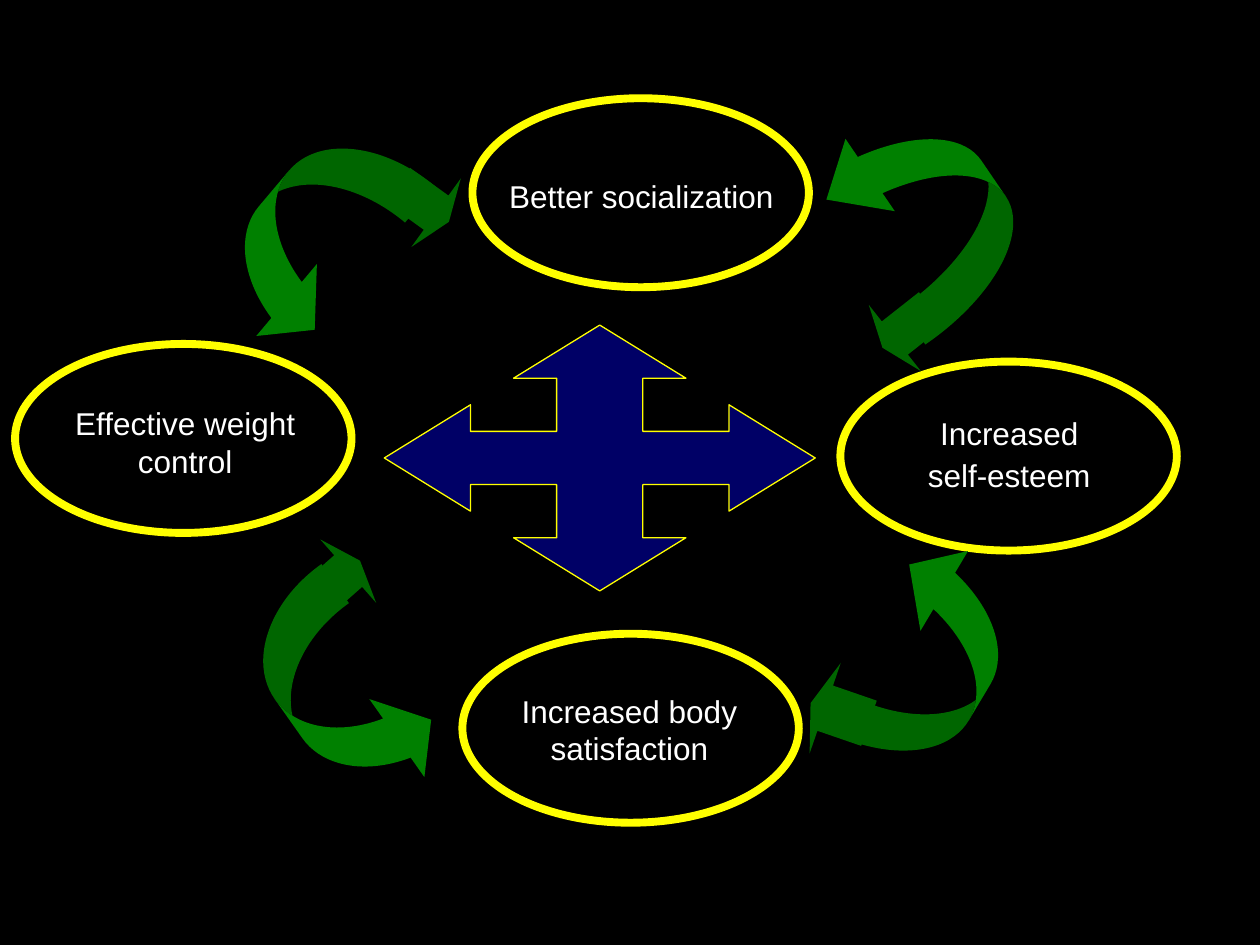
import pptx
import pptx.util
import pptx.dml.color
import pptx.enum.shapes
import pptx.enum.text

PX = 9144
SHAPES = pptx.enum.shapes.MSO_SHAPE
RGBColor = pptx.dml.color.RGBColor
BLACK = RGBColor(0x00, 0x00, 0x00)
WHITE = RGBColor(0xFF, 0xFF, 0xFF)
YELLOW = RGBColor(0xFF, 0xFF, 0x00)
NAVY = RGBColor(0x00, 0x00, 0x66)
GREEN = RGBColor(0x00, 0x80, 0x00)
DARK_GREEN = RGBColor(0x00, 0x66, 0x00)

OVAL_SIZE = (267, 150)
LABELLED_OVALS = [
    ((367, 503), (374, 544, 251, 91), ["Increased body satisfaction"]),
    ((667, 287), (676, 324, 250, 91), ["Increased", "self-esteem"]),
    ((12, 273), (20, 316, 254, 91), ["Effective weight control"]),
]
CURVED_ARROWS = [
    ((200, 95, 97, 186), 40.1, (0.385, 0.77, 0.333)),
    ((686, 430, 104, 184), 210.8, (0.322, 0.709, 0.333)),
    ((226, 457, 92, 189), 324.8, (0.412, 0.824, 0.333)),
    ((675, 81, 119, 174), 145.7, (0.292, 0.584, 0.333)),
]
ARROW_TIPS = [
    ((311, 128, 50, 67), 35.8),
    ((695, 227, 50, 67), 141.8),
    ((642, 528, 49, 76), 199),
    ((242, 428, 50, 67), 318.6),
]


def scaled(box):
    return [length * PX for length in box]


def add_oval(page, left, top):
    oval = page.shapes.add_shape(SHAPES.OVAL, *scaled((left, top, *OVAL_SIZE)))
    oval.shadow.inherit = False
    oval.fill.background()
    oval.line.color.rgb = YELLOW
    oval.line.width = pptx.util.Pt(4.5)


def write_label(shape, lines):
    frame = shape.text_frame
    frame.text = "\n".join(lines)
    for index, para in enumerate(frame.paragraphs):
        para.alignment = pptx.enum.text.PP_ALIGN.CENTER
        para.space_before = pptx.util.Pt(2 if index else 0)
        para.font.name = "Arial"
        para.font.size = pptx.util.Pt(18)
        para.font.color.rgb = WHITE


def add_label(page, box, lines):
    label = page.shapes.add_textbox(*scaled(box))
    label.text_frame.word_wrap = True
    write_label(label, lines)


def add_oval_label(page, box, lines):
    label = page.shapes.add_shape(SHAPES.OVAL, *scaled(box))
    label.shadow.inherit = False
    label.fill.background()
    label.line.fill.background()
    label.text_frame.word_wrap = False
    label.text_frame.vertical_anchor = pptx.enum.text.MSO_ANCHOR.MIDDLE
    write_label(label, lines)


def add_four_way_arrow(page, box):
    left, top, width, height = scaled(box)
    arm = [(1, -1), (1, -3), (2, -3), (0, -5), (-2, -3), (-1, -3)]
    outline = []
    for quarter in range(4):
        outline += arm
        arm = [(y, -x) for x, y in arm]
    points = [
        (round(left + width * (5 + x) / 10), round(top + height * (5 + y) / 10))
        for x, y in outline
    ]
    builder = page.shapes.build_freeform(*points[0])
    builder.add_line_segments(points[1:], close=True)
    arrow = builder.convert_to_shape()
    arrow.shadow.inherit = False
    arrow.fill.solid()
    arrow.fill.fore_color.rgb = NAVY
    arrow.line.color.rgb = YELLOW
    arrow.line.width = pptx.util.Pt(0.75)


def add_arrow(page, kind, box, rotation, adjustments, color):
    arrow = page.shapes.add_shape(kind, *scaled(box))
    arrow.shadow.inherit = False
    arrow.rotation = rotation
    for index, value in enumerate(adjustments):
        arrow.adjustments[index] = value
    arrow.fill.solid()
    arrow.fill.fore_color.rgb = color
    arrow.line.fill.background()


def main():
    deck = pptx.Presentation()
    deck.slide_width, deck.slide_height = scaled((1000, 750))
    page = deck.slides.add_slide(deck.slide_layouts[6])
    page.background.fill.solid()
    page.background.fill.fore_color.rgb = BLACK

    for corner, label_box, lines in LABELLED_OVALS:
        add_oval(page, *corner)
        add_label(page, label_box, lines)
    add_four_way_arrow(page, (305, 258, 342, 211))
    for box, rotation, adjustments in CURVED_ARROWS:
        add_arrow(page, SHAPES.CURVED_RIGHT_ARROW, box, rotation, adjustments, GREEN)
    for box, rotation in ARROW_TIPS:
        add_arrow(page, SHAPES.RIGHT_ARROW, box, rotation, (0.5, 0.25), DARK_GREEN)
    add_oval_label(page, (354, 93, 310, 125), ["Better socialization"])
    add_oval(page, 375, 78)
    deck.save("out.pptx")


if __name__ == "__main__":
    main()
